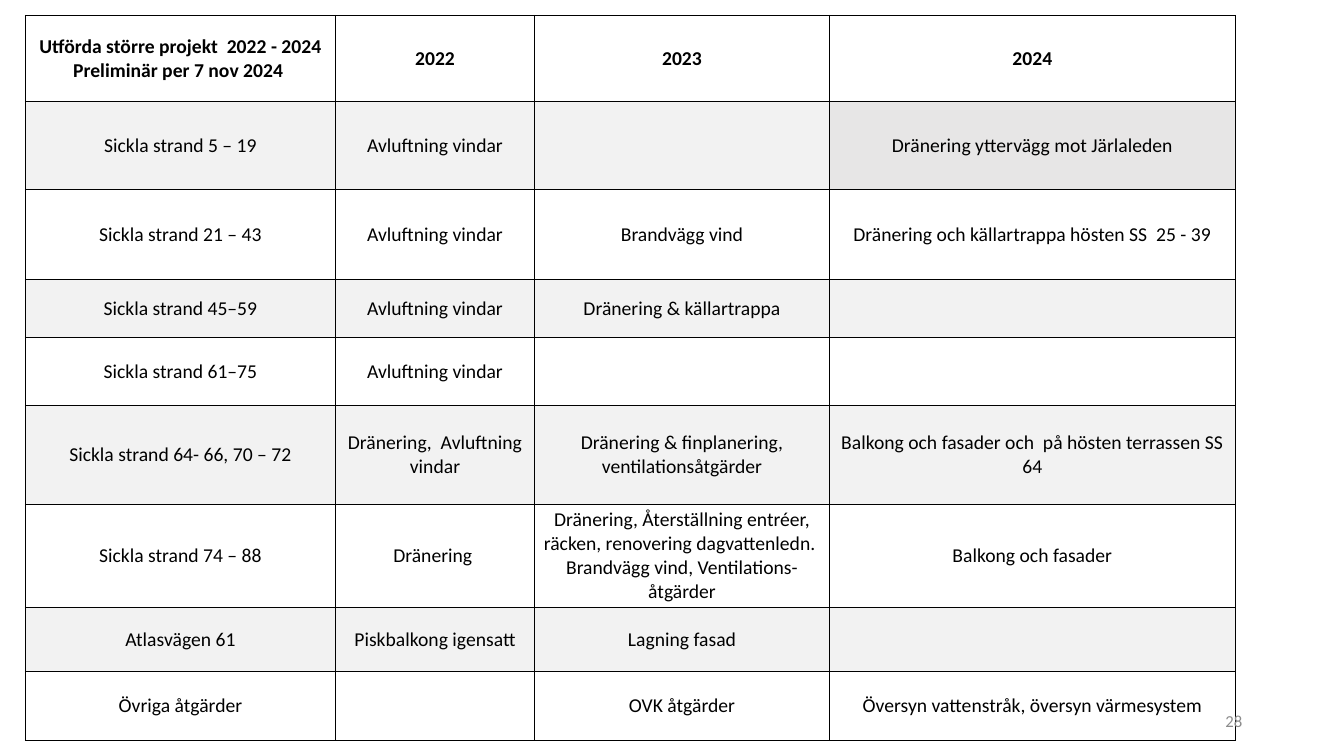
from lxml import etree
from pptx import Presentation
from pptx.dml.color import RGBColor
from pptx.enum import text as t
from pptx.oxml import ns
from pptx.util import Inches, Pt

BLACK = RGBColor(0, 0, 0)
GRAY = RGBColor(0x8C, 0x8C, 0x8C)
BAND = RGBColor(0xF2, 0xF2, 0xF2)
DARK = RGBColor(0xE7, 0xE6, 0xE6)

WIDTHS = [3.08, 1.97, 2.93, 4.02]
HEIGHTS = [0.86, 0.87, 0.89, 0.58, 0.67, 0.98, 1.03, 0.63, 0.69]
ROWS = [
    ["Utförda större projekt  2022 - 2024 Preliminär per 7 nov 2024 ", "2022", "2023", "2024"],
    ["Sickla strand 5 – 19", "Avluftning vindar", "", "Dränering yttervägg mot Järlaleden"],
    ["Sickla strand 21 – 43", "Avluftning vindar", "Brandvägg vind",
     "Dränering och källartrappa hösten SS  25 - 39"],
    ["Sickla strand 45–59", "Avluftning vindar", "Dränering & källartrappa", ""],
    ["Sickla strand 61–75", "Avluftning vindar", "", ""],
    ["Sickla strand 64- 66, 70 – 72", "Dränering,  Avluftning vindar",
     "Dränering & finplanering, ventilationsåtgärder",
     "Balkong och fasader och  på hösten terrassen SS 64"],
    ["Sickla strand 74 – 88", "Dränering ",
     "Dränering, Återställning entréer, räcken, renovering dagvattenledn.  "
     "Brandvägg vind, Ventilations-åtgärder", "Balkong och fasader"],
    ["Atlasvägen 61", "Piskbalkong igensatt", "Lagning fasad", ""],
    ["Övriga åtgärder", "", "OVK åtgärder", "Översyn vattenstråk, översyn värmesystem"],
]


def write(para, words, size, color, align, bold=False):
    para.alignment = align
    run = para.add_run()
    run.text = words
    run.font.name = "Calibri"
    run.font.size = Pt(size)
    run.font.bold = bold
    run.font.color.rgb = color


def border(cell):
    props = cell._tc.get_or_add_tcPr()
    for side in ("lnL", "lnR", "lnT", "lnB"):
        line = etree.SubElement(props, ns.qn("a:" + side), w=str(Pt(0.5)))
        fill = etree.SubElement(line, ns.qn("a:solidFill"))
        etree.SubElement(fill, ns.qn("a:srgbClr"), val=str(BLACK))


prs = Presentation()
prs.slide_width, prs.slide_height = Inches(13.33), Inches(7.5)
slide = prs.slides.add_slide(prs.slide_layouts[6])

# Project table
table = slide.shapes.add_table(len(ROWS), len(WIDTHS), Inches(0.25), Inches(0.15),
                               Inches(12), Inches(7.2)).table
table.first_row = table.horz_banding = False
for col, width in zip(table.columns, WIDTHS):
    col.width = Inches(width)
for row, height in zip(table.rows, HEIGHTS):
    row.height = Inches(height)

# Cells: every other row shaded
for i, row in enumerate(ROWS):
    for j, words in enumerate(row):
        cell = table.cell(i, j)
        cell.margin_left = cell.margin_right = cell.margin_top = cell.margin_bottom = 0
        cell.vertical_anchor = t.MSO_ANCHOR.MIDDLE
        border(cell)
        if i % 2:
            cell.fill.solid()
            cell.fill.fore_color.rgb = DARK if (i, j) == (1, 3) else BAND
        else:
            cell.fill.background()
        if words:
            write(cell.text_frame.paragraphs[0], words, 14, BLACK, t.PP_ALIGN.CENTER, i == 0)

# Page number
frame = slide.shapes.add_textbox(Inches(9.42), Inches(6.95), Inches(3), Inches(0.4)).text_frame
frame.word_wrap = True
frame.vertical_anchor = t.MSO_ANCHOR.MIDDLE
write(frame.paragraphs[0], "28", 12, GRAY, t.PP_ALIGN.RIGHT)

prs.save("out.pptx")
